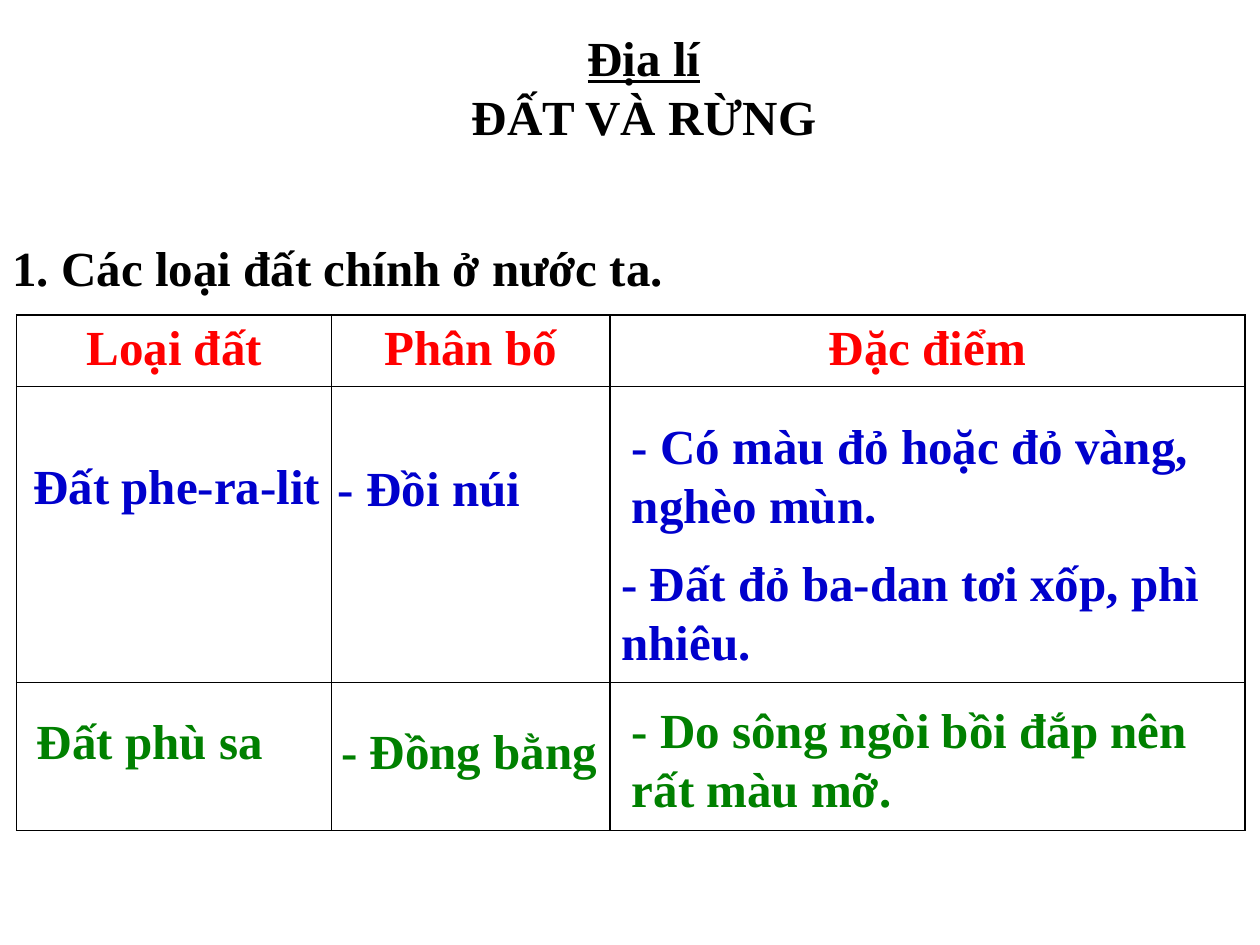
from lxml import etree
from pptx import Presentation
from pptx.dml.color import RGBColor
from pptx.enum.text import MSO_ANCHOR, MSO_AUTO_SIZE, PP_ALIGN
from pptx.oxml.ns import qn
from pptx.util import Pt

TOP, CENTER, LEFT = MSO_ANCHOR.TOP, PP_ALIGN.CENTER, PP_ALIGN.LEFT
NO_AUTOFIT = MSO_AUTO_SIZE.NONE
BLACK = RGBColor(0x00, 0x00, 0x00)
RED = RGBColor(0xFF, 0x00, 0x00)
BLUE = RGBColor(0x00, 0x00, 0xCC)
GREEN = RGBColor(0x00, 0x80, 0x00)
FONT_FORMAT = {"name": "Times New Roman", "size": Pt(28), "bold": True}
FRAME_FORMAT = {"word_wrap": True, "auto_size": NO_AUTOFIT, "vertical_anchor": TOP}


def write(paragraph, text, color, alignment=LEFT, underline=False):
    paragraph.alignment = alignment
    run = paragraph.add_run()
    run.text = text
    for key, value in FONT_FORMAT.items():
        setattr(run.font, key, value)
    run.font.underline = underline
    run.font.color.rgb = color


def add_borders(cell):
    properties = cell._tc.get_or_add_tcPr()
    for position, side in enumerate(("lnL", "lnR", "lnT", "lnB")):
        line = etree.Element(qn("a:" + side), w=str(Pt(1)))
        fill = etree.SubElement(line, qn("a:solidFill"))
        etree.SubElement(fill, qn("a:srgbClr"), val=str(BLACK))
        properties.insert(position, line)


deck = Presentation()
deck.slide_width, deck.slide_height = Pt(720), Pt(540)
slide = deck.slides.add_slide(deck.slide_layouts[5])

heading = slide.shapes.title
heading_place = {"left": Pt(12), "top": Pt(12), "width": Pt(712), "height": Pt(75)}
for key, value in heading_place.items():
    setattr(heading, key, value)
for key, value in FRAME_FORMAT.items():
    setattr(heading.text_frame, key, value)
write(heading.text_frame.paragraphs[0], "Địa lí", BLACK, CENTER, True)
write(heading.text_frame.add_paragraph(), "ĐẤT VÀ RỪNG", BLACK, CENTER)

column_widths = [180, 159, 363]
row_heights = [41, 169, 84.5]
soil_table = slide.shapes.add_table(
    len(row_heights), len(column_widths), Pt(9.5), Pt(180),
    Pt(sum(column_widths)), Pt(sum(row_heights))).table
soil_table.first_row = False
soil_table.horz_banding = False
for column, width in zip(soil_table.columns, column_widths):
    column.width = Pt(width)
for row, height in zip(soil_table.rows, row_heights):
    row.height = Pt(height)
for cell in soil_table.iter_cells():
    cell.fill.background()
    add_borders(cell)
for cell, label in zip(soil_table.rows[0].cells, ("Loại đất", "Phân bố", "Đặc điểm")):
    write(cell.text_frame.paragraphs[0], label, RED, CENTER)

notes_on_soil = [
    ("Đất phe-ra-lit", BLUE, 12, 257, 186, 41),
    ("Đất phù sa", GREEN, 14, 402.5, 168, 41),
    ("- Đồi núi", BLUE, 186, 258, 144, 41),
    ("- Đồng bằng", GREEN, 188, 408, 162, 41),
    ("- Có màu đỏ hoặc đỏ vàng, nghèo mùn.", BLUE, 354, 234, 354, 74),
    ("- Đất đỏ ba-dan tơi xốp, phì nhiêu.", BLUE, 348, 312, 354, 74),
    ("- Do sông ngòi bồi đắp nên rất màu mỡ.", GREEN, 354, 396, 348, 74),
    ("1. Các loại đất chính ở nước ta.", BLACK, 0, 132, 720, 41),
]
for text, color, *place in notes_on_soil:
    frame = slide.shapes.add_textbox(*map(Pt, place)).text_frame
    for key, value in FRAME_FORMAT.items():
        setattr(frame, key, value)
    write(frame.paragraphs[0], text, color)

deck.save("out.pptx")
